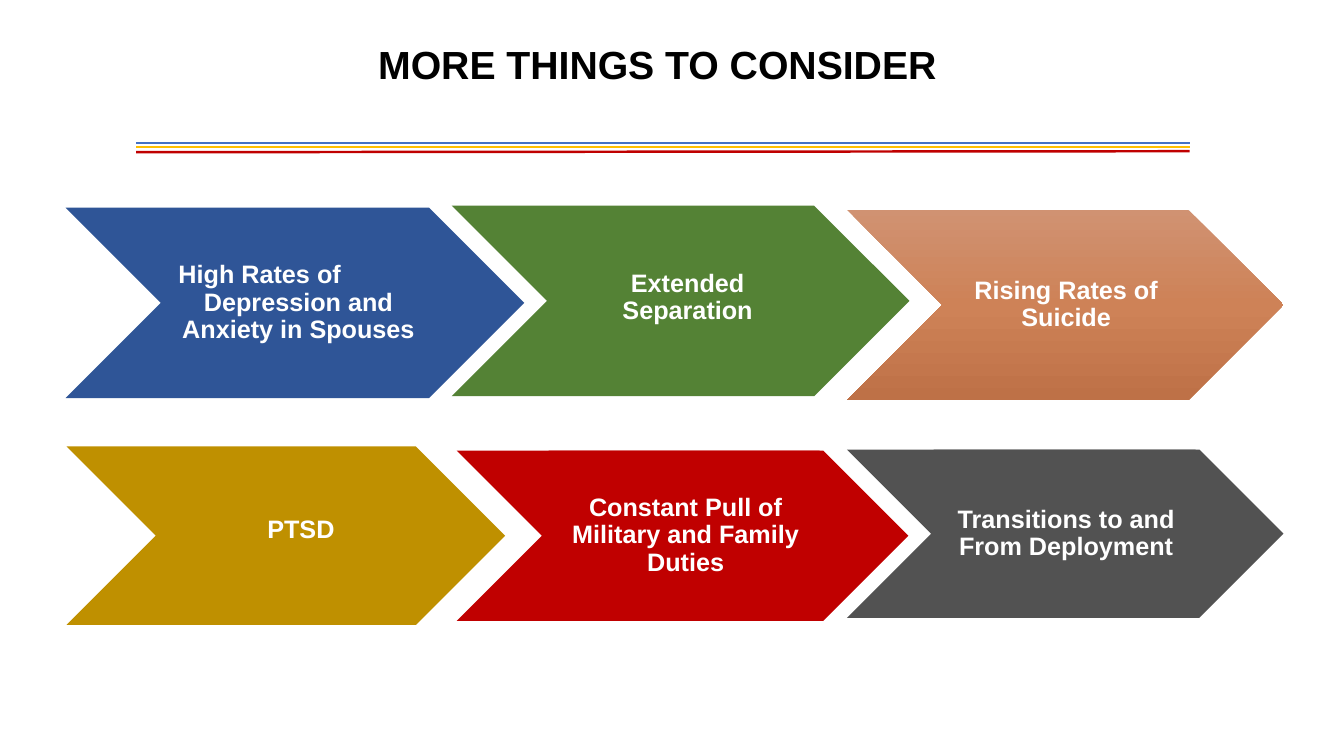
from lxml import etree
from pptx import Presentation
from pptx.dml.color import RGBColor
from pptx.enum.shapes import MSO_CONNECTOR, MSO_SHAPE
from pptx.enum.text import MSO_ANCHOR, PP_ALIGN
from pptx.oxml.ns import qn
from pptx.util import Inches, Pt

COLORS = {
    "black": "000000", "white": "FFFFFF",
    "sky": "4472C4", "amber": "FFC000", "red": "C00000",
    "blue": "2F5597", "green": "548235", "gray": "525252", "gold": "BF9000",
    "copper_light": "D09272", "copper": "CE8257", "copper_dark": "BE7147",
}
COPPER_STOPS = ((0, "copper_light"), (50, "copper"), (100, "copper_dark"))

# Rule color, start height, end height
RULES = [("sky", 1.42, 1.42), ("amber", 1.46, 1.46), ("red", 1.51, 1.5)]

# Fill, chevron bounds, label bounds, paragraphs with alignment
CENTER = PP_ALIGN.CENTER
CHEVRONS = [
    ("blue", (0.65, 2.06, 4.55, 1.89), (1.74, 2.2, 2.41, 1.61),
     [("High Rates of", PP_ALIGN.LEFT),
      ("Depression and Anxiety in Spouses", CENTER)]),
    ("green", (4.48, 2.04, 4.54, 1.89), (5.73, 2.2, 2.15, 1.51),
     [("Extended Separation", CENTER)]),
    ("gray", (8.4, 4.46, 4.33, 1.67), (9.26, 4.46, 2.6, 1.67),
     [("Transitions to and From Deployment", CENTER)]),
    ("copper", (8.4, 2.08, 4.33, 1.89), (9.26, 2.08, 2.6, 1.89),
     [("Rising Rates of Suicide", CENTER)]),
    ("red", (4.53, 4.47, 4.48, 1.69), (5.44, 4.47, 2.69, 1.69),
     [("Constant Pull of Military and Family Duties", CENTER)]),
    ("gold", (0.66, 4.43, 4.35, 1.77), (1.84, 4.6, 2.26, 1.33),
     [("PTSD", CENTER)]),
]


def rgb(name):
    return RGBColor.from_string(COLORS[name])


def inches(bounds):
    return [Inches(value) for value in bounds]


def paint(shape, color):
    shape.fill.solid()
    shape.fill.fore_color.rgb = rgb(color)


def paint_copper(shape):
    """Fill a shape with the vertical copper gradient."""
    shape.fill.gradient()
    gradient = shape.fill._fill._gradFill
    stops = gradient.find(qn("a:gsLst"))
    for stop in list(stops):
        stops.remove(stop)
    for percent, color in COPPER_STOPS:
        stop = etree.SubElement(stops, qn("a:gs"), pos=str(percent * 1000))
        etree.SubElement(stop, qn("a:srgbClr"), val=COLORS[color])
    gradient.find(qn("a:lin")).set("ang", "5400000")


def add_text(shapes, bounds, paragraphs, size, color):
    box = shapes.add_textbox(*inches(bounds))
    frame = box.text_frame
    frame.word_wrap = True
    frame.vertical_anchor = MSO_ANCHOR.MIDDLE
    frame.text = "\n".join(text for text, _ in paragraphs)
    for para, (_, alignment) in zip(frame.paragraphs, paragraphs):
        para.alignment = alignment
        para.line_spacing = 0.9
        for span in para.runs:
            span.font.name = "Arial"
            span.font.size = Pt(size)
            span.font.bold = True
            span.font.color.rgb = rgb(color)
    return box


def add_rule(page, color, start, end):
    rule = page.shapes.add_connector(
        MSO_CONNECTOR.STRAIGHT, *inches((1.35, start, 11.8, end)))
    rule.line.color.rgb = rgb(color)
    rule.line.width = Pt(1.75)
    etree.SubElement(rule._element.spPr, qn("a:effectLst"))


def add_chevron(page, color, bounds, label_bounds, paragraphs):
    group = page.shapes.add_group_shape()
    chevron = group.shapes.add_shape(MSO_SHAPE.CHEVRON, *inches(bounds))
    chevron.shadow.inherit = False
    chevron.line.fill.background()
    label = add_text(group.shapes, label_bounds, paragraphs, 18, "white")
    frame = label.text_frame
    frame.margin_left = Inches(0.03)
    frame.margin_right = 0
    frame.margin_top = frame.margin_bottom = Inches(0.01)
    if color == "copper":
        paint_copper(chevron)
    else:
        paint(chevron, color)
        paint(label, color)


def main():
    deck = Presentation()
    deck.slide_width, deck.slide_height = Inches(13.33), Inches(7.5)
    page = deck.slides.add_slide(deck.slide_layouts[6])

    # Heading and its three rules
    for rule in RULES:
        add_rule(page, *rule)
    add_text(page.shapes, (0.99, 0.11, 11.06, 1.11),
             [("MORE THINGS TO CONSIDER", CENTER)], 28, "black")

    # Topics
    for topic in CHEVRONS:
        add_chevron(page, *topic)

    deck.save("out.pptx")


if __name__ == "__main__":
    main()
